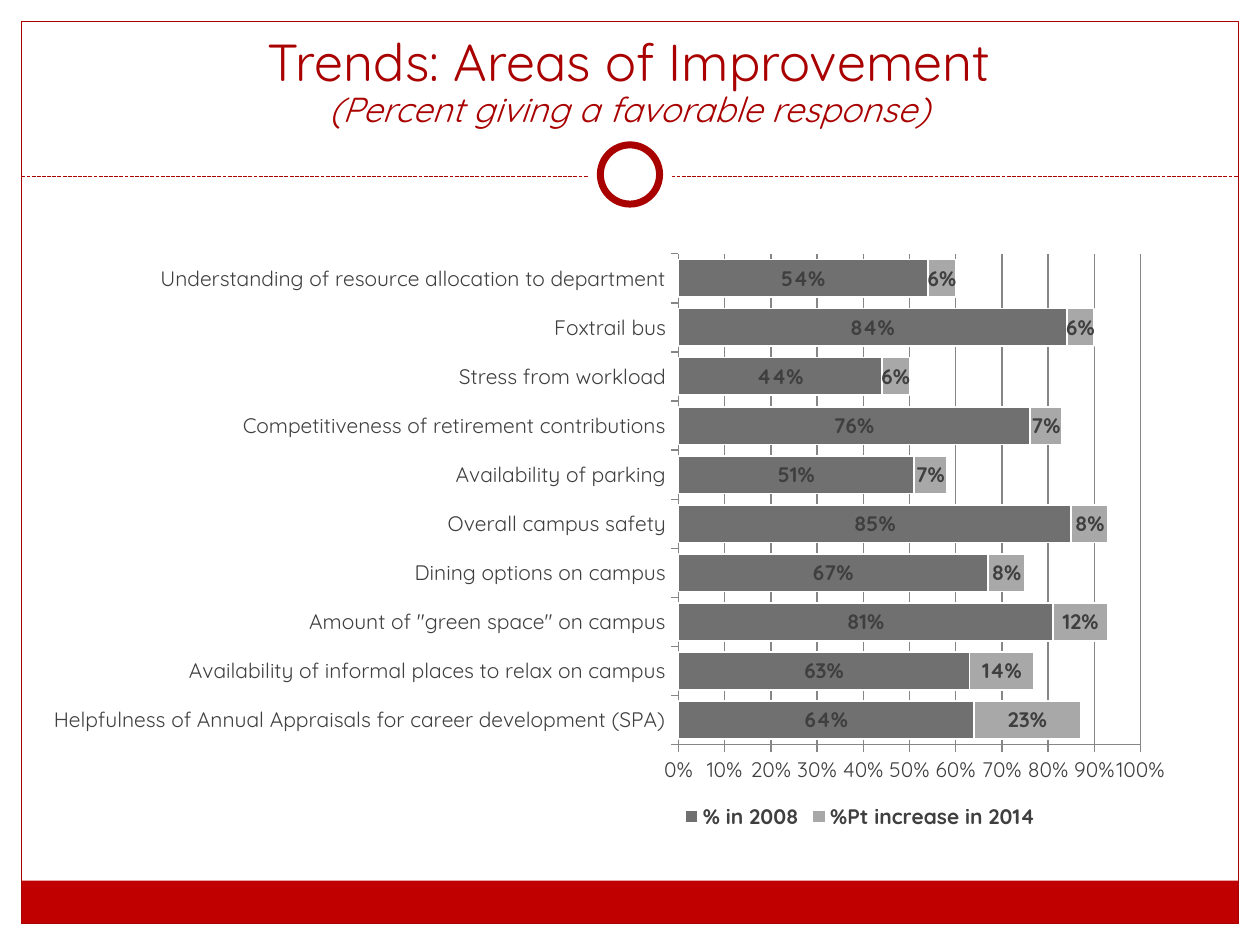
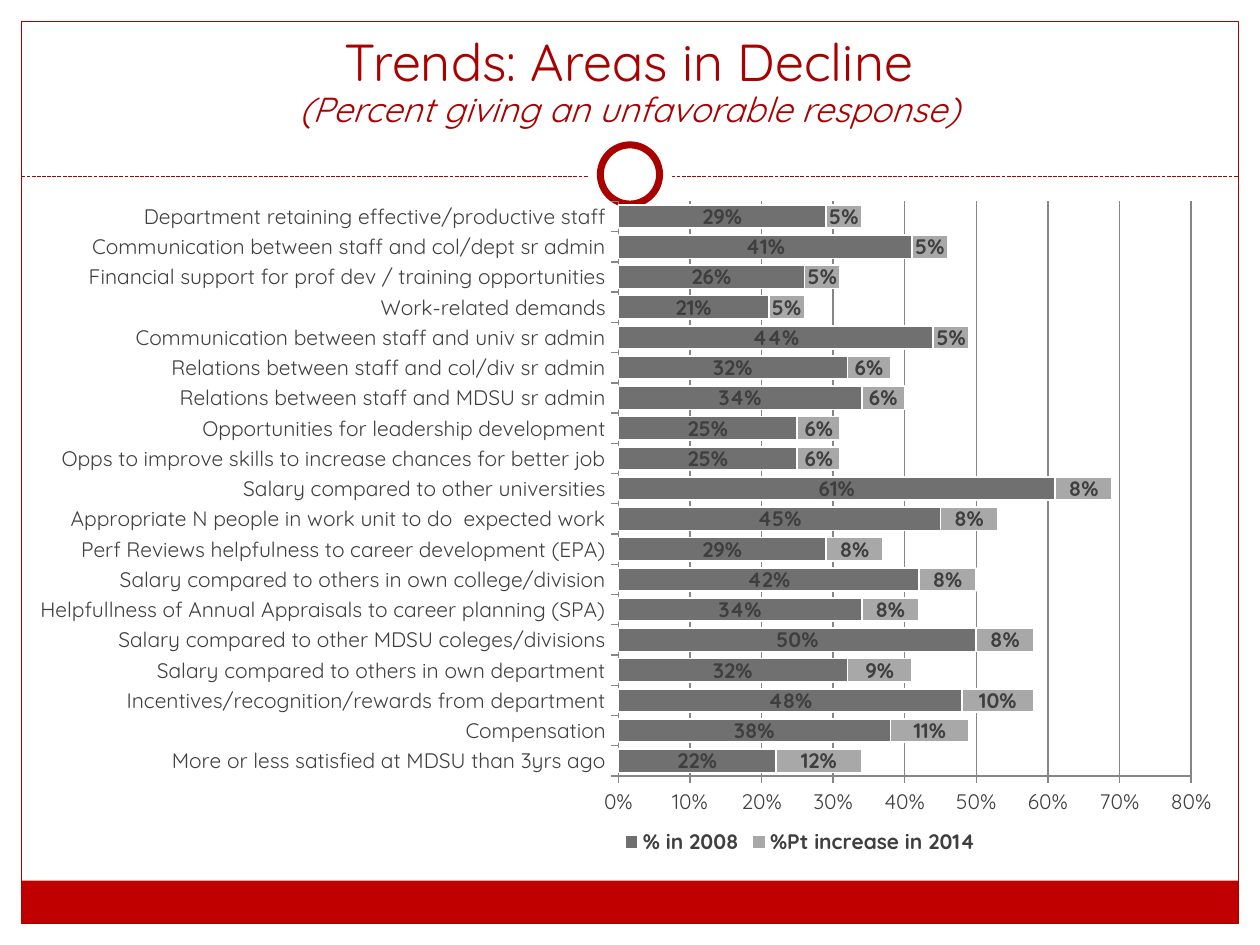
from dataclasses import dataclass

from lxml.etree import SubElement
from pptx import Presentation
from pptx.chart.data import CategoryChartData
from pptx.dml.color import RGBColor
from pptx.enum.chart import XL_CHART_TYPE, XL_LEGEND_POSITION, XL_TICK_MARK
from pptx.enum.dml import MSO_LINE
from pptx.enum.shapes import MSO_CONNECTOR, MSO_SHAPE
from pptx.enum.text import MSO_ANCHOR, PP_ALIGN
from pptx.oxml import parse_xml
from pptx.oxml.ns import nsdecls, qn
from pptx.util import Inches, Pt


@dataclass(frozen=True)
class Theme:
    """Colours, font and type sizes of the deck."""
    font: str = "Quicksand"
    paper: RGBColor = RGBColor(0xFF, 0xFF, 0xFF)
    accent: RGBColor = RGBColor(0xA9, 0x00, 0x00)
    band: RGBColor = RGBColor(0xC0, 0x00, 0x00)
    ink: RGBColor = RGBColor(0x3F, 0x3F, 0x3F)
    grid: RGBColor = RGBColor(0x86, 0x86, 0x86)
    base_bar: RGBColor = RGBColor(0x70, 0x70, 0x70)
    increase_bar: RGBColor = RGBColor(0xA8, 0xA8, 0xA8)
    title: float = 29.7
    subtitle: float = 19.8
    body: float = 12
    hairline: float = 0.75
    ring: float = 4


@dataclass(frozen=True)
class Box:
    """A rectangle in inches."""
    left: float
    top: float
    width: float
    height: float

    def inset(self, margin):
        """Return the box shrunk by a margin on every side."""
        return Box(self.left + margin, self.top + margin,
                   self.width - 2 * margin, self.height - 2 * margin)

    def emu(self):
        """Return the four lengths for python-pptx."""
        return [Inches(n) for n in (self.left, self.top, self.width, self.height)]


THEME = Theme()
PAGE = Box(0, 0, 10, 7.5)
FRAME = PAGE.inset(0.17)
HEADING = Box(0.33, 0.25, 9.33, 0.83)
BAND_HEIGHT = 0.34
RULE_DROP = 1.23
HALO_SIZE = 0.67

IMPROVEMENT = [
    ("Helpfulness of Annual Appraisals for career development (SPA)", 0.64, 0.23),
    ("Availability of informal places to relax on campus", 0.63, 0.14),
    ("Amount of \"green space\" on campus", 0.81, 0.12),
    ("Dining options on campus", 0.67, 0.08),
    ("Overall campus safety", 0.85, 0.08),
    ("Availability of parking", 0.51, 0.07),
    ("Competitiveness of retirement contributions", 0.76, 0.07),
    ("Stress from workload", 0.44, 0.06),
    ("Foxtrail bus", 0.84, 0.06),
    ("Understanding of resource allocation to department", 0.54, 0.06),
]
DECLINE = [
    ("More or less satisfied at MDSU than 3yrs ago", 0.22, 0.12),
    ("Compensation", 0.38, 0.11),
    ("Incentives/recognition/rewards from department", 0.48, 0.10),
    ("Salary compared to others in own department", 0.32, 0.09),
    ("Salary compared to other MDSU coleges/divisions", 0.50, 0.08),
    ("Helpfullness of Annual Appraisals to career planning (SPA)", 0.34, 0.08),
    ("Salary compared to others in own college/division", 0.42, 0.08),
    ("Perf Reviews helpfulness to career development (EPA)", 0.29, 0.08),
    ("Appropriate N people in work unit to do  expected work", 0.45, 0.08),
    ("Salary compared to other universities", 0.61, 0.08),
    ("Opps to improve skills to increase chances for better job", 0.25, 0.06),
    ("Opportunities for leadership development", 0.25, 0.06),
    ("Relations between staff and MDSU sr admin", 0.34, 0.06),
    ("Relations between staff and col/div sr admin", 0.32, 0.06),
    ("Communication between staff and univ sr admin", 0.44, 0.05),
    ("Work-related demands", 0.21, 0.05),
    ("Financial support for prof dev / training opportunities", 0.26, 0.05),
    ("Communication between staff and col/dept sr admin", 0.41, 0.05),
    ("Department retaining effective/productive staff", 0.29, 0.05),
]


def add_figure(slide, preset, box, fill=None, line=None, weight=THEME.hairline):
    """Draw a preset shape with an optional fill and outline."""
    figure = slide.shapes.add_shape(preset, *box.emu())
    figure.shadow.inherit = False
    if fill is None:
        figure.fill.background()
    else:
        figure.fill.solid()
        figure.fill.fore_color.rgb = fill
    if line is None:
        figure.line.fill.background()
    else:
        figure.line.color.rgb = line
        figure.line.width = Pt(weight)


def add_frame(slide, box):
    """Draw the border, bottom band, dashed rule and ring."""
    bottom = box.top + box.height
    add_figure(slide, MSO_SHAPE.RECTANGLE,
               Box(box.left, bottom - BAND_HEIGHT, box.width, BAND_HEIGHT), THEME.band)
    add_figure(slide, MSO_SHAPE.RECTANGLE, box, line=THEME.accent)

    rule_top = box.top + RULE_DROP
    rule = slide.shapes.add_connector(
        MSO_CONNECTOR.STRAIGHT, Inches(box.left), Inches(rule_top),
        Inches(box.left + box.width), Inches(rule_top))
    rule.line.color.rgb = THEME.accent
    rule.line.width = Pt(THEME.hairline)
    rule.line.dash_style = MSO_LINE.SQUARE_DOT
    SubElement(rule.element.spPr, qn("a:effectLst"))

    halo = Box(box.left + (box.width - HALO_SIZE) / 2, rule_top - 0.35,
               HALO_SIZE, HALO_SIZE)
    add_figure(slide, MSO_SHAPE.OVAL, halo, THEME.paper)
    add_figure(slide, MSO_SHAPE.OVAL, halo.inset(0.1), THEME.paper, THEME.accent, THEME.ring)


def add_heading(slide, box, title, subtitle):
    """Write the title with its italic subtitle on the next line."""
    frame = slide.shapes.add_textbox(*box.emu()).text_frame
    frame.word_wrap = True
    frame.vertical_anchor = MSO_ANCHOR.BOTTOM
    heading = frame.paragraphs[0]
    heading.alignment = PP_ALIGN.CENTER
    heading.line_spacing = 0.9
    heading.font.name = THEME.font
    heading.font.color.rgb = THEME.accent
    main = heading.add_run()
    main.text = title
    main.font.size = Pt(THEME.title)
    heading.add_line_break()
    detail = heading.add_run()
    detail.text = subtitle
    detail.font.size = Pt(THEME.subtitle)
    detail.font.italic = True


def make_layout(target="", **shares):
    """Build a manual chart layout from shares of the chart's size."""
    inner = f'<c:layoutTarget val="{target}"/>' if target else ""
    modes = '<c:xMode val="edge"/><c:yMode val="edge"/>'
    lengths = "".join(f'<c:{key} val="{share}"/>' for key, share in shares.items())
    return parse_xml(f'<c:layout {nsdecls("c")}><c:manualLayout>{inner}{modes}'
                     f'{lengths}</c:manualLayout></c:layout>')


def place_part(part, layout, index):
    """Give a chart part its manual layout."""
    for old in part.findall(qn("c:layout")):
        part.remove(old)
    part.insert(index, layout)


def add_trend_chart(slide, box, trends, plot_share, maximum):
    """Draw the stacked bars of 2008 shares and 2014 increases."""
    areas, base, increase = zip(*trends)
    chart_data = CategoryChartData(number_format="0%")
    chart_data.categories = areas
    chart_data.add_series("% in 2008", base)
    chart_data.add_series("%Pt increase in 2014", increase)
    chart = slide.shapes.add_chart(
        XL_CHART_TYPE.BAR_STACKED, *box.emu(), chart_data).chart
    chart.has_title = False
    chart.font.name = THEME.font
    chart.font.size = Pt(THEME.body)
    chart.font.color.rgb = THEME.ink

    bars = chart.plots[0]
    bars.gap_width = 30
    bars.overlap = 100
    bars.vary_by_categories = False
    bars.has_data_labels = True
    labels = bars.data_labels
    labels.show_value = True
    labels.number_format = "0%"
    labels.number_format_is_linked = False
    labels.font.bold = True
    labels.font.name = THEME.font
    labels.font.size = Pt(THEME.body)
    labels.font.color.rgb = THEME.ink
    for series, colour in zip(bars.series, (THEME.base_bar, THEME.increase_bar)):
        series.format.fill.solid()
        series.format.fill.fore_color.rgb = colour
        series.format.line.color.rgb = THEME.paper
        series.format.line.width = Pt(1)

    shares = chart.value_axis
    shares.minimum_scale = 0
    shares.maximum_scale = maximum
    shares.major_unit = 0.1
    shares.has_major_gridlines = True
    shares.tick_labels.number_format = "0%"
    shares.tick_labels.number_format_is_linked = False
    for axis in (chart.category_axis, shares):
        axis.major_tick_mark = XL_TICK_MARK.OUTSIDE
        axis.format.line.color.rgb = THEME.grid
        axis.format.line.width = Pt(THEME.hairline)
    shares.major_gridlines.format.line.color.rgb = THEME.grid
    shares.major_gridlines.format.line.width = Pt(THEME.hairline)

    chart.has_legend = True
    chart.legend.position = XL_LEGEND_POSITION.BOTTOM
    chart.legend.include_in_layout = False
    chart.legend.font.bold = True
    chart.legend.font.name = THEME.font
    chart.legend.font.size = Pt(THEME.body)
    chart.legend.font.color.rgb = THEME.ink

    left, top, width, height = plot_share
    plot_area = chart.element.xpath("c:chart/c:plotArea")[0]
    legend = chart.element.xpath("c:chart/c:legend")[0]
    place_part(plot_area, make_layout("inner", x=left, y=top, w=width, h=height), 0)
    place_part(legend, make_layout(x=left, y=0.93), 1)


def add_trend_slide(deck, title, subtitle, chart_box, trends, plot_share, maximum):
    """Add one slide with frame, heading and trend chart."""
    slide = deck.slides.add_slide(deck.slide_layouts[6])
    add_frame(slide, FRAME)
    add_heading(slide, HEADING, title, subtitle)
    add_trend_chart(slide, chart_box, trends, plot_share, maximum)


def main():
    """Build and save the deck."""
    deck = Presentation()
    deck.slide_width = Inches(PAGE.width)
    deck.slide_height = Inches(PAGE.height)
    add_trend_slide(deck, "Trends: Areas of Improvement",
                    "(Percent giving a favorable response)",
                    Box(0.25, 1.92, 9.17, 4.75), IMPROVEMENT,
                    (0.56, 0.02, 0.4, 0.82), 1)
    add_trend_slide(deck, "Trends: Areas in Decline",
                    "(Percent giving an unfavorable response)",
                    Box(0.17, 1.49, 9.67, 5.43), DECLINE,
                    (0.49, 0.02, 0.47, 0.84), 0.8)
    deck.save("out.pptx")


if __name__ == "__main__":
    main()
